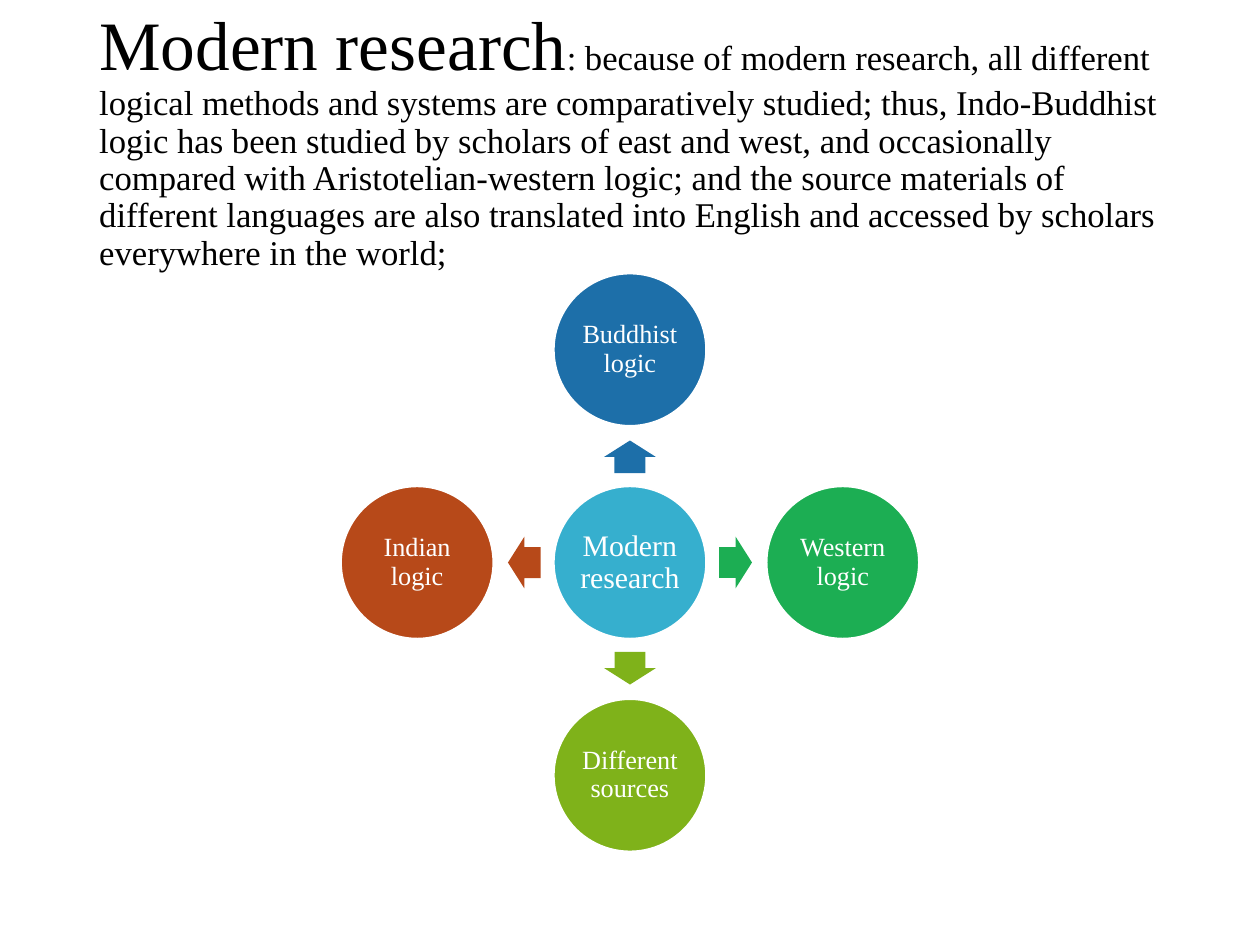
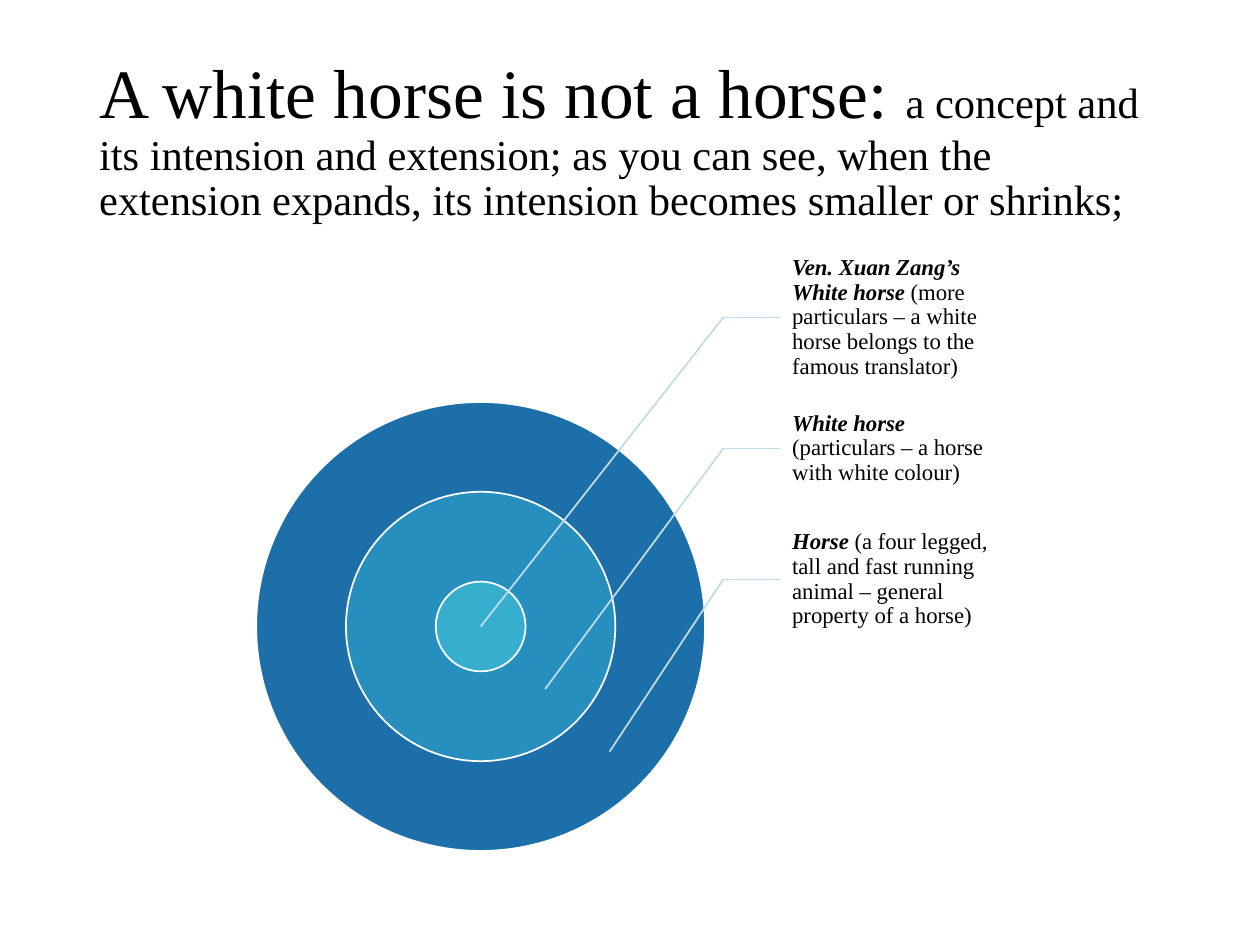
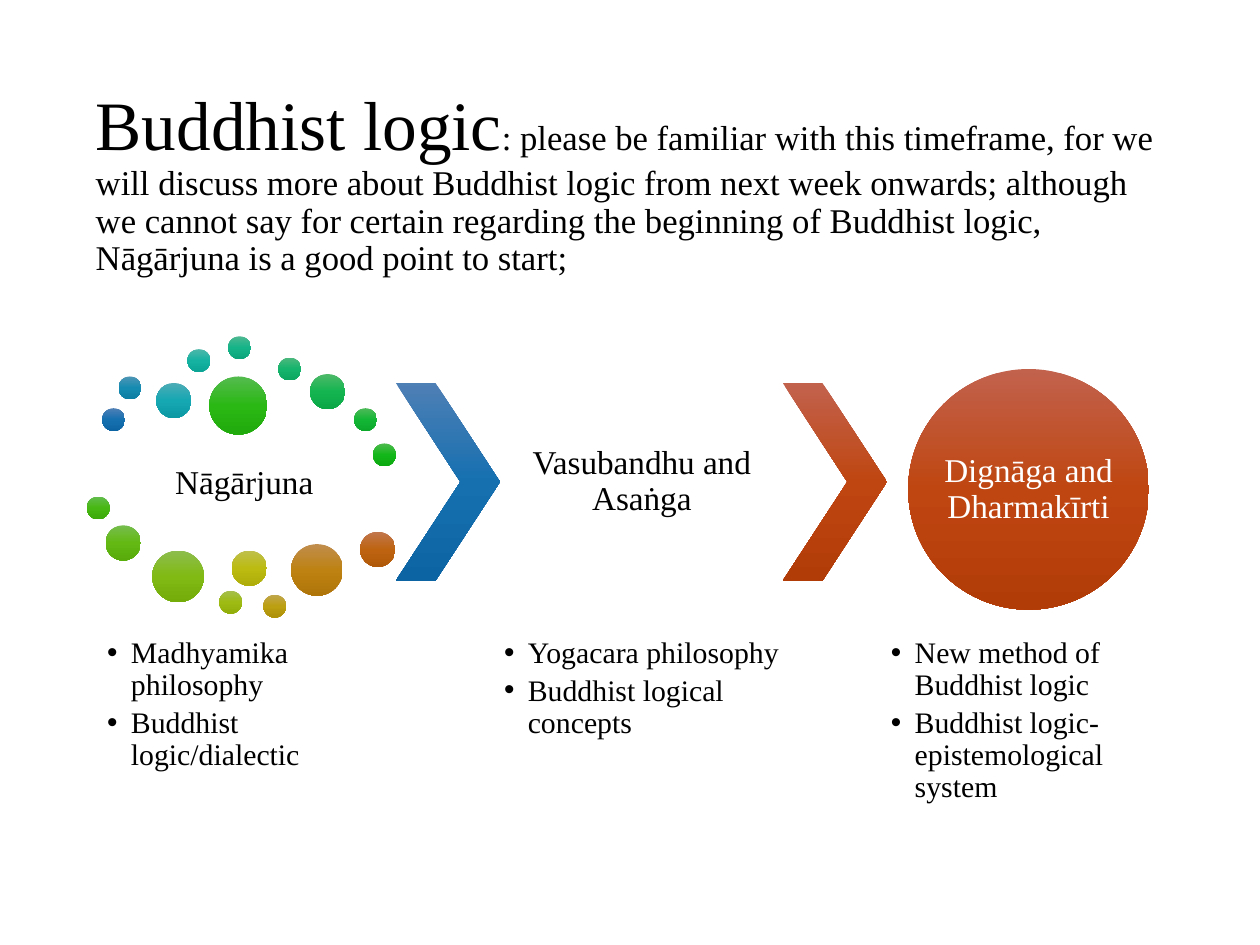
from colorsys import hsv_to_rgb
from copy import deepcopy
from math import cos, radians, sin

from lxml import etree
from pptx import Presentation
from pptx.dml.color import RGBColor
from pptx.enum import shapes, text
from pptx.oxml import ns
from pptx.util import Cm, Pt

FONT = "Times New Roman"
BLACK = RGBColor(0x00, 0x00, 0x00)
WHITE = RGBColor(0xFF, 0xFF, 0xFF)
NAVY = RGBColor(0x1D, 0x6F, 0xA9)
BLUE = RGBColor(0x27, 0x8F, 0xBE)
SKY = RGBColor(0x36, 0xAF, 0xCE)
GREEN = RGBColor(0x1C, 0xAE, 0x53)
LIME = RGBColor(0x7F, 0xB2, 0x1A)
RUST = RGBColor(0xB7, 0x49, 0x19)
PALE = RGBColor(0xBF, 0xDC, 0xE8)

FORM = shapes.MSO_SHAPE
MID = text.MSO_ANCHOR.MIDDLE
TOP = text.MSO_ANCHOR.TOP
LEFT = text.PP_ALIGN.LEFT
CENTER = text.PP_ALIGN.CENTER
TITLE_ONLY, COMPARE = 5, 4
LAST = 18

DOTS = [
    (2.06, 8.23, 0.46), (2.39, 7.59, 0.46), (3.15, 7.72, 0.71),
    (3.78, 7.04, 0.46), (4.6, 6.78, 0.46), (5.61, 7.21, 0.46),
    (6.25, 7.54, 0.71), (7.14, 8.23, 0.46), (7.52, 8.94, 0.46),
    (4.22, 7.59, 1.17), (1.75, 10.01, 0.46), (2.13, 10.59, 0.71),
    (3.07, 11.1, 1.04), (4.42, 11.91, 0.46), (4.67, 11.1, 0.71),
    (5.31, 11.99, 0.46), (5.87, 10.97, 1.04), (7.26, 10.72, 0.71),
]


def set_frame(shape, anchor, pad):
    frame = shape.text_frame
    frame.word_wrap = True
    frame.auto_size = text.MSO_AUTO_SIZE.NONE
    frame.vertical_anchor = anchor
    frame.margin_left = frame.margin_right = Cm(pad)
    frame.margin_top = frame.margin_bottom = Cm(min(pad, 0.13))
    return frame


def fill_para(para, runs, align=LEFT):
    para.alignment = align
    para.line_spacing = 0.9
    para.space_before = Pt(0)
    for words, size, color, strong in runs:
        run = para.add_run()
        run.text = words
        font = run.font
        font.name, font.size = FONT, Pt(size)
        font.bold = font.italic = strong
        font.color.rgb = color


def place(shape, x, y, w, h):
    shape.left, shape.top = Cm(x), Cm(y)
    shape.width, shape.height = Cm(w), Cm(h)


def add_slide(deck, layout, head, rest, size, x=1.75, y=1.02):
    slide = deck.slides.add_slide(deck.slide_layouts[layout])
    title = slide.shapes.title
    place(title, x, y, 21.9, 3.68)
    frame = set_frame(title, MID, 0.25)
    fill_para(frame.paragraphs[0],
              [(head, 39.6, BLACK, False), (rest, size, BLACK, False)])
    return slide


def add_form(slide, kind, x, y, w, h, fill=None, edge=False):
    shape = slide.shapes.add_shape(kind, Cm(x), Cm(y), Cm(w), Cm(h))
    shape.shadow.inherit = False
    if fill is not None:
        shape.fill.solid()
        shape.fill.fore_color.rgb = fill
    if edge:
        shape.line.color.rgb = WHITE
        shape.line.width = Pt(1)
    else:
        shape.line.fill.background()
    return shape


def add_disc(slide, x, y, d, fill):
    return add_form(slide, FORM.OVAL, x - d / 2, y - d / 2, d, d, fill, True)


def label(shape, words, size, color=WHITE, pad=0.05):
    frame = set_frame(shape, MID, pad)
    fill_para(frame.paragraphs[0], [(words, size, color, False)], CENTER)


def add_box(slide, x, y, w, h):
    return slide.shapes.add_textbox(Cm(x), Cm(y), Cm(w), Cm(h))


def add_line(slide, x1, y1, x2, y2):
    line = slide.shapes.add_connector(
        shapes.MSO_CONNECTOR.STRAIGHT, Cm(x1), Cm(y1), Cm(x2), Cm(y2))
    line.line.color.rgb = PALE
    line.line.width = Pt(1)
    etree.SubElement(line._element.spPr, ns.qn("a:effectLst"))


def shades(step):
    part = step / LAST
    hue = (205 - 10.37 * step) / 360
    base = [255 * c for c in
            hsv_to_rgb(hue, 0.875 + 0.036 * part, 0.69 + 0.06 * part)]
    light = [255 * (0.9 * (c / 255) ** 2.2 + 0.07) ** (1 / 2.2) for c in base]
    dark = [max(0, 0.97 * c - 8.5) for c in base]
    return [RGBColor(*map(round, tone)) for tone in (light, base, dark)]


def shade(shape, step):
    shape.fill.gradient()
    shape.fill.gradient_angle = 270
    stops = shape._element.spPr.find(ns.qn("a:gradFill")).find(ns.qn("a:gsLst"))
    stops.insert(1, deepcopy(stops[0]))
    for i, (stop, tone) in enumerate(zip(shape.fill.gradient_stops, shades(step))):
        stop.position = i / 2
        stop.color.rgb = tone


def fill_list(holder, x, w, items):
    place(holder, x, 12.78, w, 3.53)
    frame = set_frame(holder, TOP, 0.08)
    for i, item in enumerate(items):
        para = frame.add_paragraph() if i else frame.paragraphs[0]
        fill_para(para, [(item, 17, BLACK, False)])
        para.space_after = Pt(3)
        props = para._p.get_or_add_pPr()
        props.set("marL", str(Cm(0.48)))
        props.set("indent", str(-Cm(0.48)))
        etree.SubElement(props, ns.qn("a:buFont")).set("typeface", "Arial")
        etree.SubElement(props, ns.qn("a:buChar")).set("char", "•")


def research(deck):
    slide = add_slide(
        deck, TITLE_ONLY, "Modern research",
        ": because of modern research, all different logical methods and "
        "systems are comparatively studied; thus, Indo-Buddhist logic has been "
        "studied by scholars of east and west, and occasionally compared with "
        "Aristotelian-western logic; and the source materials of different "
        "languages are also translated into English and accessed by scholars "
        "everywhere in the world;", 19.8)
    x, y, d = 12.7, 11.34, 3.07
    label(add_disc(slide, x, y, d, SKY), "Modern research", 17)
    for turn, words, fill in [(270, "Buddhist logic", NAVY),
                              (0, "Western logic", GREEN),
                              (90, "Different sources", LIME),
                              (180, "Indian logic", RUST)]:
        dx, dy = cos(radians(turn)), sin(radians(turn))
        arrow = add_form(slide, FORM.RIGHT_ARROW, x + 2.13 * dx - 0.33,
                         y + 2.13 * dy - 0.52, 0.66, 1.04, fill)
        arrow.adjustments[0], arrow.adjustments[1] = 0.6, 0.5
        arrow.rotation = turn
        label(add_disc(slide, x + 4.29 * dx, y + 4.29 * dy, d, fill), words, 15)


def horses(deck):
    slide = add_slide(
        deck, TITLE_ONLY, "A white horse is not a horse: ",
        "a concept and its intension and extension; as you can see, when the "
        "extension expands, its intension becomes smaller or shrinks;", 24.3)
    x, y = 9.69, 12.63
    for size, fill in [(5, NAVY), (3, BLUE), (1, SKY)]:
        add_disc(slide, x, y, 1.81 * size, fill)
    notes = [
        ("Ven. Xuan Zang’s White horse ",
         "(more particulars – a white horse belongs to the famous translator)"),
        ("White horse ", "(particulars – a horse with white colour)"),
        ("Horse",
         " (a four legged, tall and fast running animal – general property of "
         "a horse)"),
    ]
    bend, edge, high = 14.58, 15.72, 2.64
    for i, (name, gloss) in enumerate(notes):
        top = 5.08 + i * high
        box = add_box(slide, edge, top, 4.52, high)
        frame = set_frame(box, MID, 0.05)
        frame.margin_left = Cm(0.25)
        fill_para(frame.paragraphs[0],
                  [(name, 13, BLACK, True), (gloss, 13, BLACK, False)])
        level = top + high / 2
        add_line(slide, bend, level, edge, level)
        add_line(slide, bend, level, x + 1.3 * i, y + 1.26 * i)


def logic(deck):
    slide = add_slide(
        deck, COMPARE, "Buddhist logic",
        ": please be familiar with this timeframe, for we will discuss more "
        "about Buddhist logic from next week onwards; although we cannot say "
        "for certain regarding the beginning of Buddhist logic, Nāgārjuna is a "
        "good point to start;", 19.8, 1.68, 1.88)
    *holders, spare = list(slide.placeholders)[1:]
    spare._element.getparent().remove(spare._element)
    lists = [
        (2.08, 5.69, ["Madhyamika philosophy", "Buddhist logic/dialectic"]),
        (10.08, 5.72, ["Yogacara philosophy", "Buddhist logical concepts"]),
        (17.88, 5.72, ["New method of Buddhist logic",
                       "Buddhist logic-epistemological system"]),
    ]
    for holder, (x, w, items) in zip(holders, lists):
        fill_list(holder, x, w, items)
    label(add_box(slide, 2.08, 8.81, 5.69, 1.88), "Nāgārjuna", 19, BLACK, 0.08)
    for step, (x, y, d) in enumerate(DOTS):
        shade(add_form(slide, FORM.OVAL, x, y, d, d), step)
    for x, step in [(7.98, 0), (15.78, LAST)]:
        arrow = add_form(slide, FORM.CHEVRON, x, 7.72, 2.1, 3.99)
        arrow.adjustments[0] = 0.62
        shade(arrow, step)
    label(add_box(slide, 10.08, 7.72, 5.72, 3.99),
          "Vasubandhu and Asaṅga", 19, BLACK, 0.08)
    disc = add_form(slide, FORM.OVAL, 18.31, 7.44, 4.85, 4.85)
    shade(disc, LAST)
    label(disc, "Dignāga and Dharmakīrti", 19, WHITE, 0)


def main():
    deck = Presentation()
    deck.slide_width, deck.slide_height = Cm(25.4), Cm(19.05)
    research(deck)
    horses(deck)
    logic(deck)
    deck.save("out.pptx")


if __name__ == "__main__":
    main()
